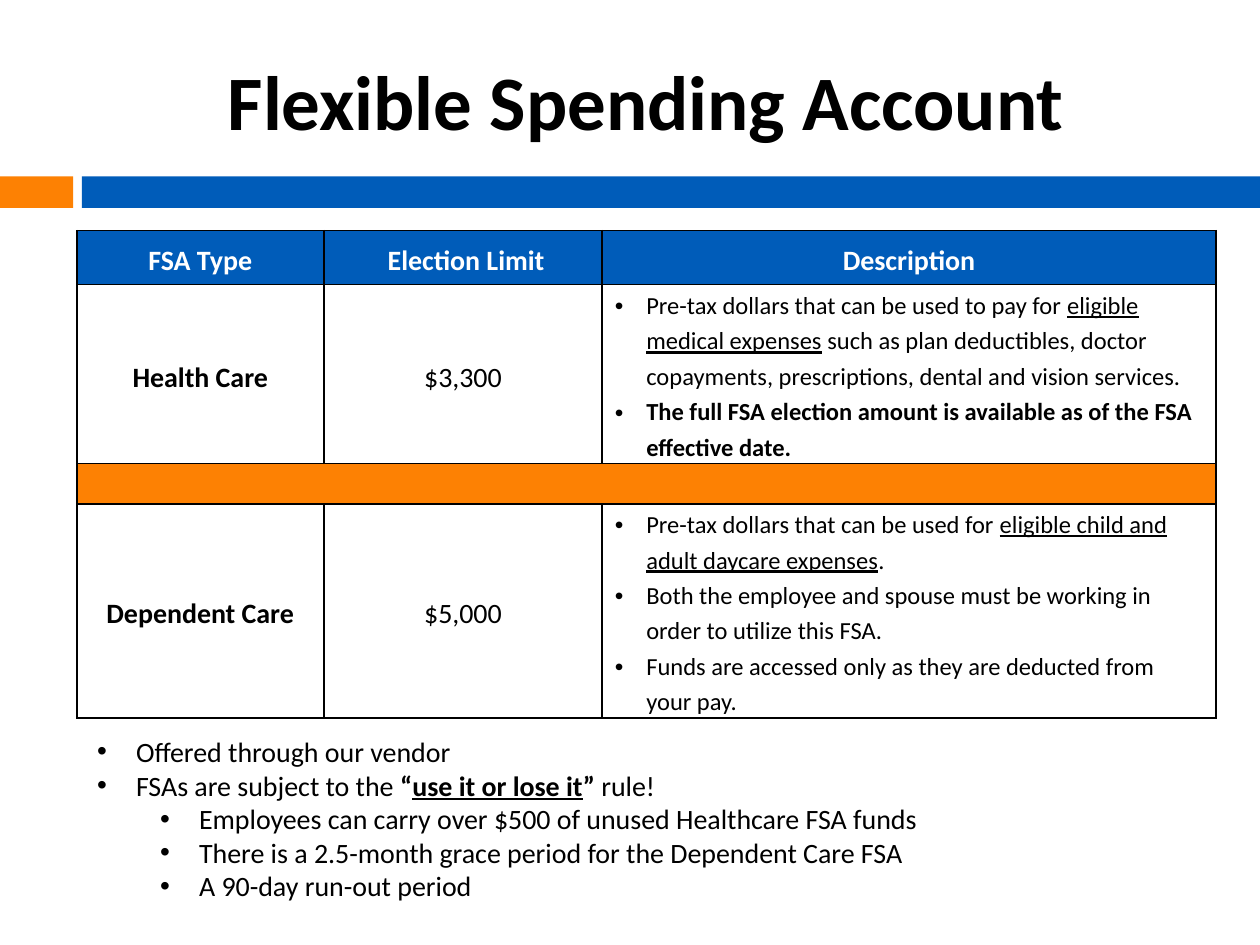
from lxml.etree import SubElement
from pptx import Presentation
from pptx.dml.color import RGBColor
from pptx.enum.shapes import MSO_SHAPE
from pptx.enum.text import MSO_ANCHOR, MSO_AUTO_SIZE, PP_ALIGN
from pptx.oxml.ns import qn
from pptx.util import Inches, Pt

THEME = {
    "font": "Calibri", "black": "000000", "white": "FFFFFF",
    "blue": "005CB9", "orange": "FD8103",
    "title": 44, "text": 16, "detail": 14, "leading": 1.19,
}

# A paragraph is a list of (text, style) runs; style letters: b bold, u underline.
TITLE = "Flexible Spending Account"
HEADER = ["FSA Type", "\u00a0Election Limit", "Description"]
PLANS = {
    1: ("Health Care", "$3,300", [
        [("Pre-tax dollars that can be used to pay for ", ""),
         ("eligible medical expenses", "u"),
         (" such as plan deductibles, doctor copayments, prescriptions, "
          "dental and vision services.", "")],
        [("The full FSA election amount is available as of the FSA effective date.", "b")],
    ]),
    3: ("Dependent Care", "$5,000", [
        [("Pre-tax dollars that can be used for ", ""),
         ("eligible child and adult daycare expenses", "u"), (".", "")],
        [("Both the employee and spouse must be working in order to utilize this FSA.", "")],
        [("Funds are accessed only as they are deducted from your pay.", "")],
    ]),
}
DIVIDER_ROW = 2
NOTES = [
    (0, [("Offered through our vendor", "")]),
    (0, [("FSAs are subject to the ", ""), ("“", "b"), ("use it or lose it", "bu"),
         ("” ", "b"), ("rule!", "")]),
    (1, [("Employees can carry over $500 of unused Healthcare FSA funds", "")]),
    (1, [("There is a 2.5-month grace period for the Dependent Care FSA", "")]),
    (1, [("A 90-day run-out period", "")]),
]
COLS = [1.96, 2.21, 4.87]
ROWS = [0.43, 1.42, 0.32, 1.7]
BARS = [(0, 0.58, "orange"), (0.65, 9.35, "blue")]


def rgb(name):
    return RGBColor.from_string(THEME[name])


def place(s, left, top, width, height):
    s.left, s.top, s.width, s.height = map(Inches, (left, top, width, height))


def write(p, runs, *, size="text", color="black", align=None, leading=1.0,
          level=0, indent=None):
    """Fill a paragraph with runs; indent is (left, hanging) and adds a bullet."""
    p.level = level
    p.alignment = align
    p.line_spacing = leading
    p.space_before = p.space_after = Pt(0)
    if indent:
        left, hanging = indent
        pPr = p._p.get_or_add_pPr()
        pPr.set("marL", str(Inches(left)))
        pPr.set("indent", str(-Inches(hanging)))
        SubElement(pPr, qn("a:buFont"), typeface="Arial")
        SubElement(pPr, qn("a:buChar"), char="•")
    for text, style in runs:
        r = p.add_run()
        r.text = text
        r.font.name = THEME["font"]
        r.font.size = Pt(THEME[size])
        r.font.color.rgb = rgb(color)
        r.font.bold = "b" in style
        r.font.underline = "u" in style


def paragraphs(tf, count):
    return [tf.paragraphs[0]] + [tf.add_paragraph() for _ in range(count - 1)]


def format_cell(cell, fill=None, side=0):
    cell.margin_left = cell.margin_right = Inches(side)
    cell.margin_top = cell.margin_bottom = 0
    cell.vertical_anchor = MSO_ANCHOR.MIDDLE
    tcPr = cell._tc.get_or_add_tcPr()
    for edge in ("lnL", "lnR", "lnT", "lnB"):
        ln = SubElement(tcPr, qn(f"a:{edge}"), w=str(Pt(1)))
        SubElement(SubElement(ln, qn("a:solidFill")), qn("a:srgbClr"), val=THEME["black"])
    if fill:
        cell.fill.solid()
        cell.fill.fore_color.rgb = rgb(fill)
    else:
        cell.fill.background()


def add_bars(slide):
    for left, width, color in BARS:
        s = slide.shapes.add_shape(MSO_SHAPE.RECTANGLE, Inches(left), Inches(1.4),
                                   Inches(width), Inches(0.25))
        s.shadow.inherit = False
        s.fill.solid()
        s.fill.fore_color.rgb = rgb(color)
        s.line.fill.background()


def add_plan_table(slide):
    table = slide.shapes.add_table(len(ROWS), len(COLS), Inches(0.61), Inches(1.83),
                                   Inches(sum(COLS)), Inches(sum(ROWS))).table
    table.first_row = table.horz_banding = False
    for col, width in zip(table.columns, COLS):
        col.width = Inches(width)
    for row, height in zip(table.rows, ROWS):
        row.height = Inches(height)

    centred = {"align": PP_ALIGN.CENTER, "leading": THEME["leading"]}
    for c, text in enumerate(HEADER):
        cell = table.cell(0, c)
        format_cell(cell, "blue")
        write(cell.text_frame.paragraphs[0], [(text, "b")], color="white", **centred)

    for c in range(len(COLS)):
        format_cell(table.cell(DIVIDER_ROW, c), "orange")
    table.cell(DIVIDER_ROW, 0).merge(table.cell(DIVIDER_ROW, len(COLS) - 1))

    for row, (name, limit, details) in PLANS.items():
        for c, run in enumerate([(name, "b"), (limit, "")]):
            cell = table.cell(row, c)
            format_cell(cell)
            write(cell.text_frame.paragraphs[0], [run], **centred)
        cell = table.cell(row, 2)
        format_cell(cell, side=0.1)
        for p, runs in zip(paragraphs(cell.text_frame, len(details)), details):
            write(p, runs, size="detail", leading=THEME["leading"], indent=(0.25, 0.25))


def main():
    prs = Presentation()
    prs.slide_width, prs.slide_height = Inches(10), Inches(7.5)
    slide = prs.slides.add_slide(prs.slide_layouts[1])
    title, body = slide.placeholders

    place(title, 0.67, 0.25, 8.92, 1.08)
    title.text_frame.vertical_anchor = MSO_ANCHOR.MIDDLE
    write(title.text_frame.paragraphs[0], [(TITLE, "b")], size="title",
          align=PP_ALIGN.CENTER)

    add_bars(slide)
    add_plan_table(slide)

    place(body, 0.67, 5.78, 9.18, 1.45)
    tf = body.text_frame
    tf.auto_size = MSO_AUTO_SIZE.SHAPE_TO_FIT_TEXT
    tf.vertical_anchor = MSO_ANCHOR.TOP
    for p, (level, runs) in zip(paragraphs(tf, len(NOTES)), NOTES):
        write(p, runs, level=level, indent=(0.31 + 0.5 * level, 0.31))

    prs.save("out.pptx")


if __name__ == "__main__":
    main()
